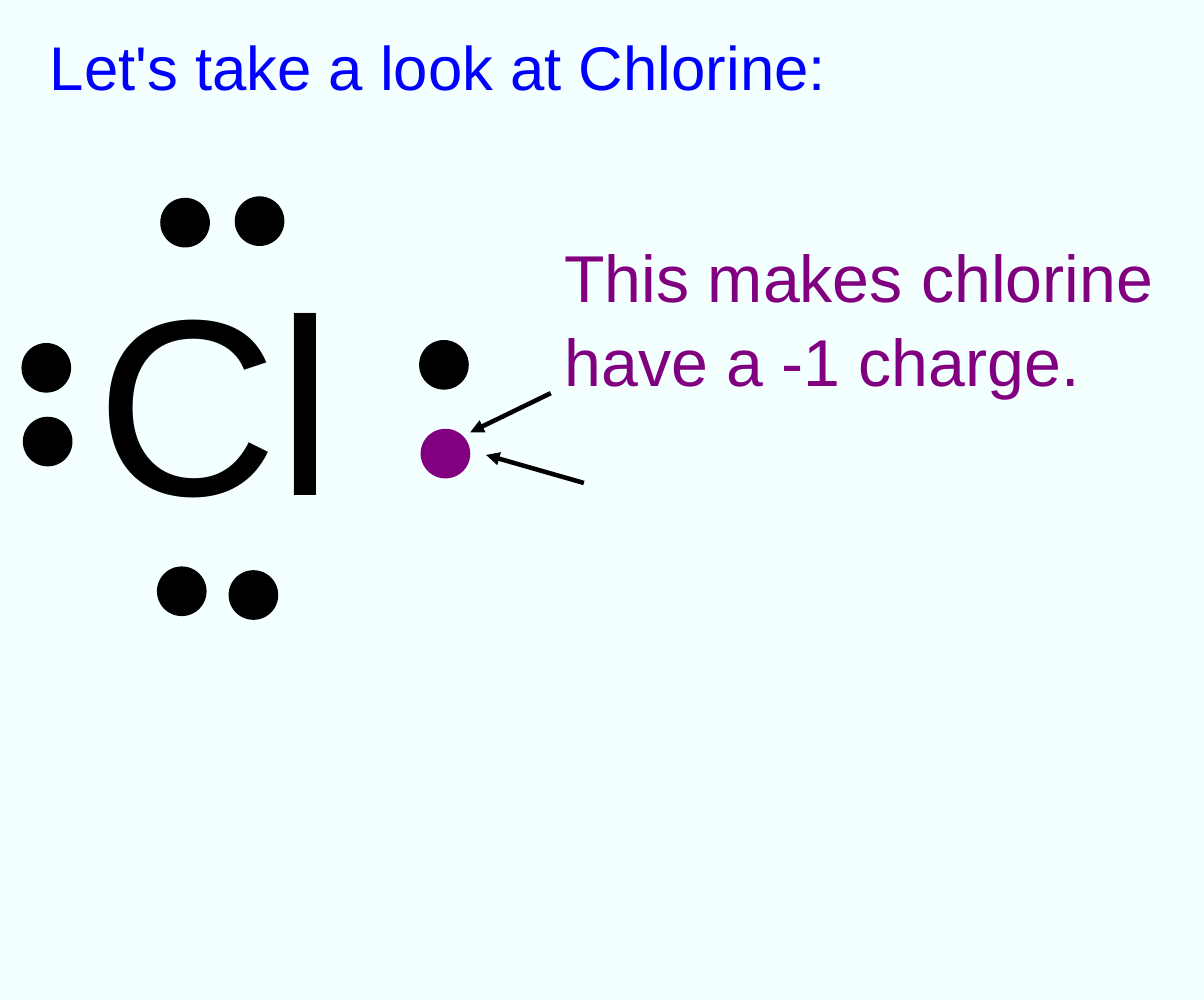
from lxml import etree
from pptx import Presentation
from pptx.dml.color import RGBColor
from pptx.enum import shapes, text
from pptx.oxml import ns
from pptx.util import Pt

# Content: lengths in points
INK, PLUM = "000000", "800080"
SIZE = 800, 665.28
TEXTS = [  # wording, size, colour, left, top, width, height
    ("Let's take a look at Chlorine:", 41, "0000FF", 26, 13, 712, 57),
    ("Cl", 167, INK, 57, 148.5, 221, 209.5),
    ("This makes chlorine have a -1 charge.", 44, PLUM, 368, 151, 458, 114),
]
DOT = 30
EDGE = 3
DOTS = [  # left, top, colour
    (108, 133, INK), (157.5, 132, INK),
    (15.8, 229.5, INK), (16.7, 278.5, INK),
    (105.8, 378, INK), (153.4, 380.5, INK),
    (280, 227.5, INK), (281, 286.5, PLUM),
]
ARROWS = [(388, 321, 323, 302.4), (366, 261.3, 312.5, 287.3)]


def paint(hue):
    return RGBColor.from_string(hue)


def write(slide, words, size, hue, *box):
    frame = slide.shapes.add_textbox(*map(Pt, box)).text_frame
    frame.word_wrap = True
    frame.auto_size = text.MSO_AUTO_SIZE.SHAPE_TO_FIT_TEXT
    line = frame.paragraphs[0]
    line.line_spacing = 1.05
    run = line.add_run()
    run.text = words
    run.font.name = "Arial"
    run.font.size = Pt(size)
    run.font.color.rgb = paint(hue)


def edge(shape, hue):
    shape.line.color.rgb = paint(hue)
    shape.line.width = Pt(EDGE)


def dot(slide, left, top, hue):
    ball = slide.shapes.add_shape(
        shapes.MSO_SHAPE.OVAL, Pt(left), Pt(top), Pt(DOT), Pt(DOT))
    ball.shadow.inherit = False
    ball.fill.solid()
    ball.fill.fore_color.rgb = paint(hue)
    edge(ball, hue)


def arrow(slide, *ends):
    link = slide.shapes.add_connector(
        shapes.MSO_CONNECTOR.STRAIGHT, *map(Pt, ends))
    edge(link, INK)
    tip = etree.SubElement(link.line._get_or_add_ln(), ns.qn("a:tailEnd"))
    tip.set("type", "triangle")
    etree.SubElement(link._element.spPr, ns.qn("a:effectLst"))


def main():
    deck = Presentation()
    deck.slide_width, deck.slide_height = map(Pt, SIZE)
    slide = deck.slides.add_slide(deck.slide_layouts[6])
    slide.background.fill.solid()
    slide.background.fill.fore_color.rgb = paint("F4FFFF")

    # Heading, symbol and remark
    for item in TEXTS:
        write(slide, *item)

    # Electrons around the symbol
    for item in DOTS:
        dot(slide, *item)

    # Arrows to the added electron
    for ends in ARROWS:
        arrow(slide, *ends)

    deck.save("out.pptx")


if __name__ == "__main__":
    main()
